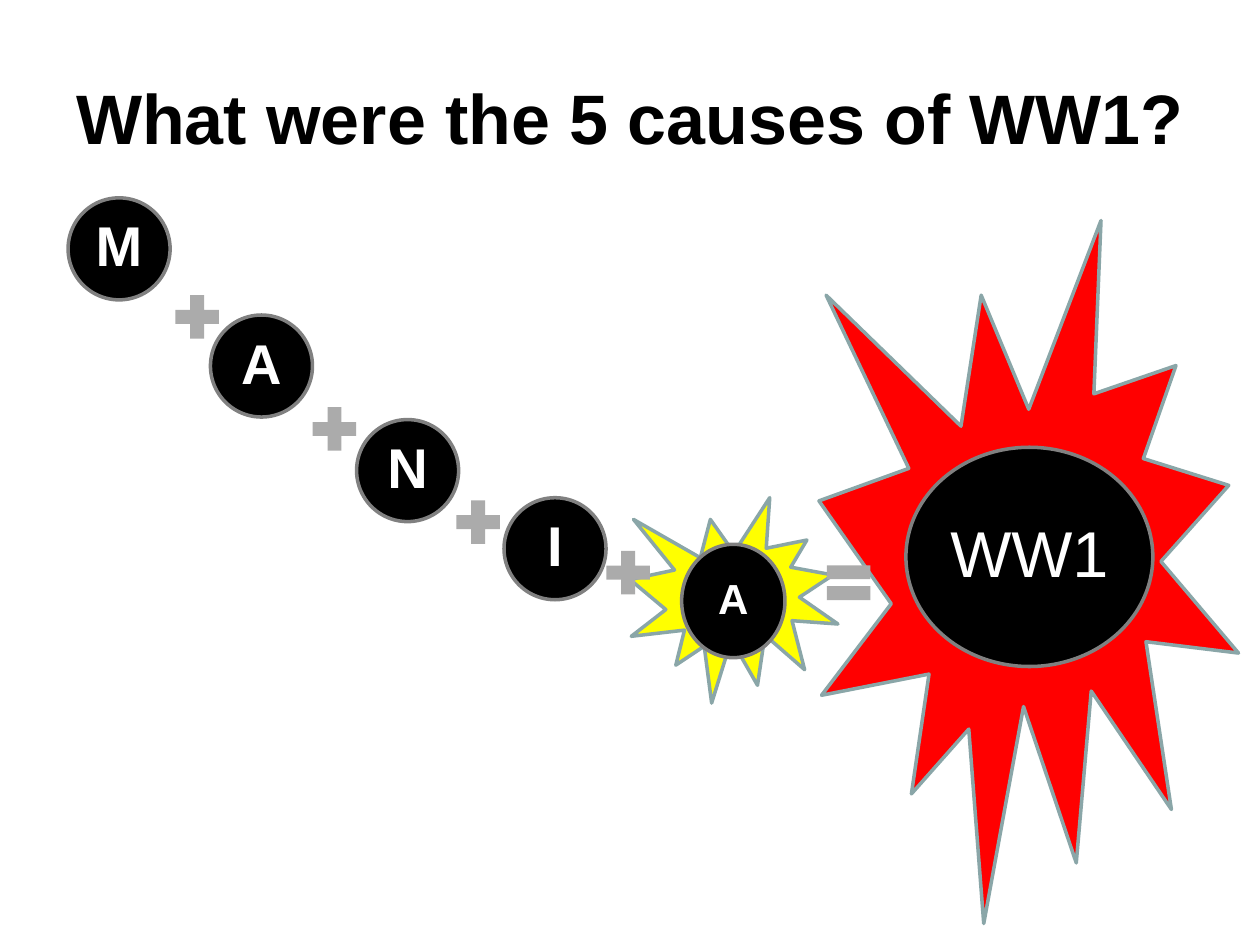
from pptx import Presentation
from pptx.dml.color import RGBColor
from pptx.enum.shapes import MSO_SHAPE
from pptx.enum.text import MSO_ANCHOR, PP_ALIGN
from pptx.util import Inches, Pt


def color(code):
    return RGBColor.from_string(code)


def write(frame, text, size=32, bold=True, ink="FFFFFF", inset=0.04, space=0.9, wrap=False):
    frame.word_wrap = wrap
    frame.vertical_anchor = MSO_ANCHOR.MIDDLE
    frame.margin_left = frame.margin_right = Inches(inset)
    frame.margin_top = frame.margin_bottom = Inches(inset)
    para = frame.paragraphs[0]
    para.alignment = PP_ALIGN.CENTER
    para.line_spacing = space
    run = para.add_run()
    run.text = text
    run.font.name = "Arial"
    run.font.size = Pt(size)
    run.font.bold = bold
    run.font.color.rgb = color(ink)


class Board:
    black, edge, gray, rim = "000000", "808080", "ABABAB", "8AA6A8"

    def __init__(self, slide):
        self.slide = slide

    def shape(self, kind, box, fill, line=None):
        item = self.slide.shapes.add_shape(kind, *map(Inches, box))
        item.shadow.inherit = False
        item.fill.solid()
        item.fill.fore_color.rgb = color(fill)
        if line:
            item.line.color.rgb = color(line)
            item.line.width = Pt(2)
        else:
            item.line.fill.background()
        return item

    def title(self, text, box):
        item = self.slide.shapes.add_textbox(*map(Inches, box))
        write(item.text_frame, text, size=40, ink=self.black, inset=0.05, space=1.0, wrap=True)

    def burst(self, box, fill):
        self.shape(MSO_SHAPE.EXPLOSION1, box, fill, self.rim)

    def disc(self, text, box, **style):
        item = self.shape(MSO_SHAPE.OVAL, box, self.black, self.edge)
        write(item.text_frame, text, **style)

    def sign(self, kind, left, top):
        self.shape(kind, (left, top, 0.47, 0.47), self.gray)


def main():
    deck = Presentation()
    deck.slide_width, deck.slide_height = Inches(10), Inches(7.5)
    board = Board(deck.slides.add_slide(deck.slide_layouts[6]))

    # Bursts and title
    board.burst((5, 3.95, 1.65, 1.63), "FFFF00")
    board.title("What were the 5 causes of WW1?", (0.5, 0.3, 9, 1.25))
    board.burst((6.5, 1.75, 3.33, 5.58), "FF0000")

    # Four causes, each followed by a plus
    steps = [
        ("M", (0.54, 1.57), (1.33, 2.28)),
        ("A", (1.67, 2.5), (2.42, 3.17)),
        ("N", (2.83, 3.33), (3.56, 3.91)),
        ("I", (4, 3.95), (4.75, 4.31)),
    ]
    for text, spot, plus in steps:
        board.disc(text, (*spot, 0.81, 0.81))
        board.sign(MSO_SHAPE.MATH_PLUS, *plus)

    # Last cause and the result
    board.disc("A", (5.41, 4.32, 0.82, 0.9), size=24, inset=0.03)
    board.sign(MSO_SHAPE.MATH_EQUAL, 6.5, 4.39)
    board.disc("WW1", (7.19, 3.55, 1.96, 1.74), size=37, bold=False, inset=0.05)

    deck.save("out.pptx")


if __name__ == "__main__":
    main()
